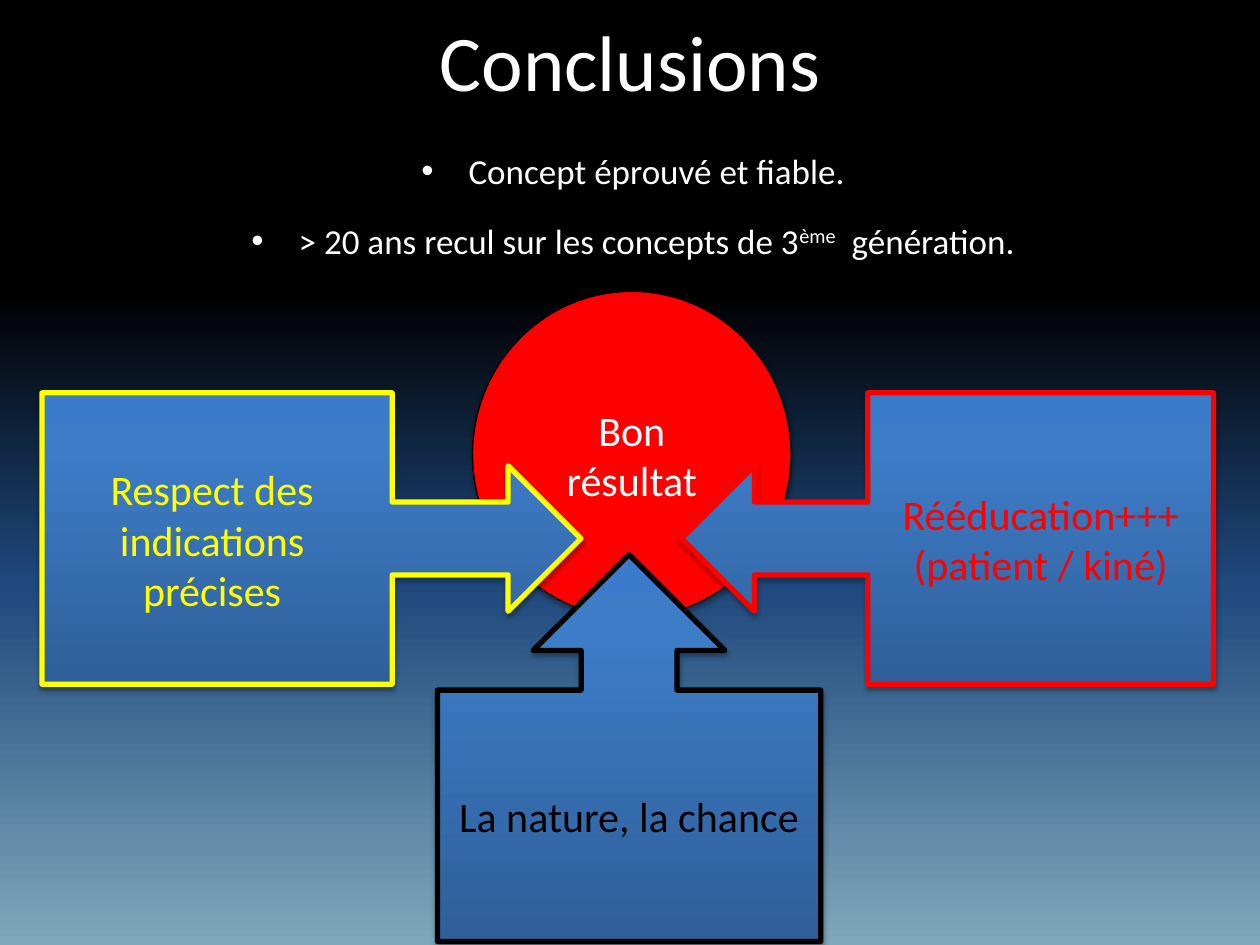
from lxml import etree
from pptx import Presentation
from pptx.dml.color import RGBColor
from pptx.enum.shapes import MSO_SHAPE
from pptx.enum.text import MSO_ANCHOR, MSO_AUTO_SIZE, PP_ALIGN
from pptx.oxml import parse_xml
from pptx.oxml.ns import qn
from pptx.util import Pt

OVAL = MSO_SHAPE.OVAL
LEFT = MSO_SHAPE.LEFT_ARROW_CALLOUT
UP = MSO_SHAPE.UP_ARROW_CALLOUT
RIGHT = MSO_SHAPE.RIGHT_ARROW_CALLOUT
MID = MSO_ANCHOR.MIDDLE
TOP = MSO_ANCHOR.TOP
MAIN = "http://schemas.openxmlformats.org/drawingml/2006/main"
SHADE = (
    f'<a:outerShdw xmlns:a="{MAIN}" blurRad="40000" dist="23000" dir="5400000" '
    'rotWithShape="0"><a:srgbClr val="000000"><a:alpha val="35000"/></a:srgbClr></a:outerShdw>'
)
BLUE = [(0, "2F5F99"), (80, "3D7CC7"), (100, "3A7CCB")]
SKY = [(0, "000000"), (31, "000000"), (62, "1F497D"), (100, "7EA8BA")]


def write(frame, lines, size, color):
    for i, line in enumerate(lines):
        para = frame.paragraphs[0] if i == 0 else frame.add_paragraph()
        para.alignment = PP_ALIGN.CENTER
        for text, base in line:
            run = para.add_run()
            run.text = text
            run.font.name = "Calibri"
            run.font.size = Pt(size)
            run.font.color.rgb = RGBColor.from_string(color)
            if base:
                run.font._element.set("baseline", str(base * 1000))


def blend(fill, node, stops, angle):
    fill.gradient()
    fill.gradient_angle = angle
    group = node.xpath(".//a:gsLst")[0]
    for old in list(group):
        group.remove(old)
    for pos, color in stops:
        stop = etree.SubElement(group, qn("a:gs"), pos=str(pos * 1000))
        etree.SubElement(stop, qn("a:srgbClr"), val=color)


prs = Presentation()
prs.slide_width, prs.slide_height = Pt(720), Pt(540)
slide = prs.slides.add_slide(prs.slide_layouts[1])
blend(slide.background.fill, slide._element, SKY, 270)

title, body = slide.placeholders
title.left, title.top, title.width, title.height = Pt(36), Pt(1.5), Pt(648), Pt(66)
write(title.text_frame, [[("Conclusions", 0)]], 45, "FFFFFF")

body.left, body.top, body.width, body.height = Pt(15), Pt(86.5), Pt(693.5), Pt(118)
frame = body.text_frame
frame.auto_size = MSO_AUTO_SIZE.NONE
frame.vertical_anchor = MID
frame.margin_bottom = Pt(72)
points = [
    [("Concept éprouvé et fiable.", 0)],
    [("> 20 ans recul sur les concepts de 3", 0), ("ème", 30), ("  génération.", 0)],
]
write(frame, points, 20, "FFFFFF")
for i, para in enumerate(frame.paragraphs):
    para.line_spacing = 1.5
    para.space_before = Pt(4 * i)
    props = para._p.get_or_add_pPr()
    props.set("marL", str(Pt(27)))
    props.set("indent", str(-Pt(27)))

group = None
parts = [
    (OVAL, 270, 166.5, 182, 186.5, "000000", "FFFFFF", ["Bon résultat"]),
    (LEFT, 389.5, 224.5, 304, 166.5, "FF0000", "FF0000", ["Rééducation+++", "(patient / kiné)"]),
    (UP, 250, 317, 219, 221, "000000", "000000", ["La nature, la chance"]),
    (RIGHT, 24, 224.5, 308, 166.5, "FFFF00", "FFFF00", []),
]
for kind, x, y, w, h, edge, ink, lines in parts:
    home = slide.shapes
    if kind == RIGHT:
        group = slide.shapes.add_group_shape()
        home = group.shapes
    shape = home.add_shape(kind, Pt(x), Pt(y), Pt(w), Pt(h))
    if kind == OVAL:
        shape.fill.solid()
        shape.fill.fore_color.rgb = RGBColor.from_string("FF0000")
    else:
        blend(shape.fill, shape._element, BLUE, 90)
    shape.line.color.rgb = RGBColor.from_string(edge)
    shape.line.width = Pt(0.75 if kind == OVAL else 3)
    shape.shadow.inherit = False
    shape._element.spPr.find(qn("a:effectLst")).append(parse_xml(SHADE))
    shape.text_frame.vertical_anchor = MID
    write(shape.text_frame, [[(line, 0)] for line in lines], 24, ink)

label = group.shapes.add_textbox(Pt(24), Pt(261.5), Pt(194.5), Pt(94.5))
label.text_frame.word_wrap = True
label.text_frame.vertical_anchor = TOP
write(label.text_frame, [[("Respect des indications précises", 0)]], 24, "FFFF00")

prs.save("out.pptx")
